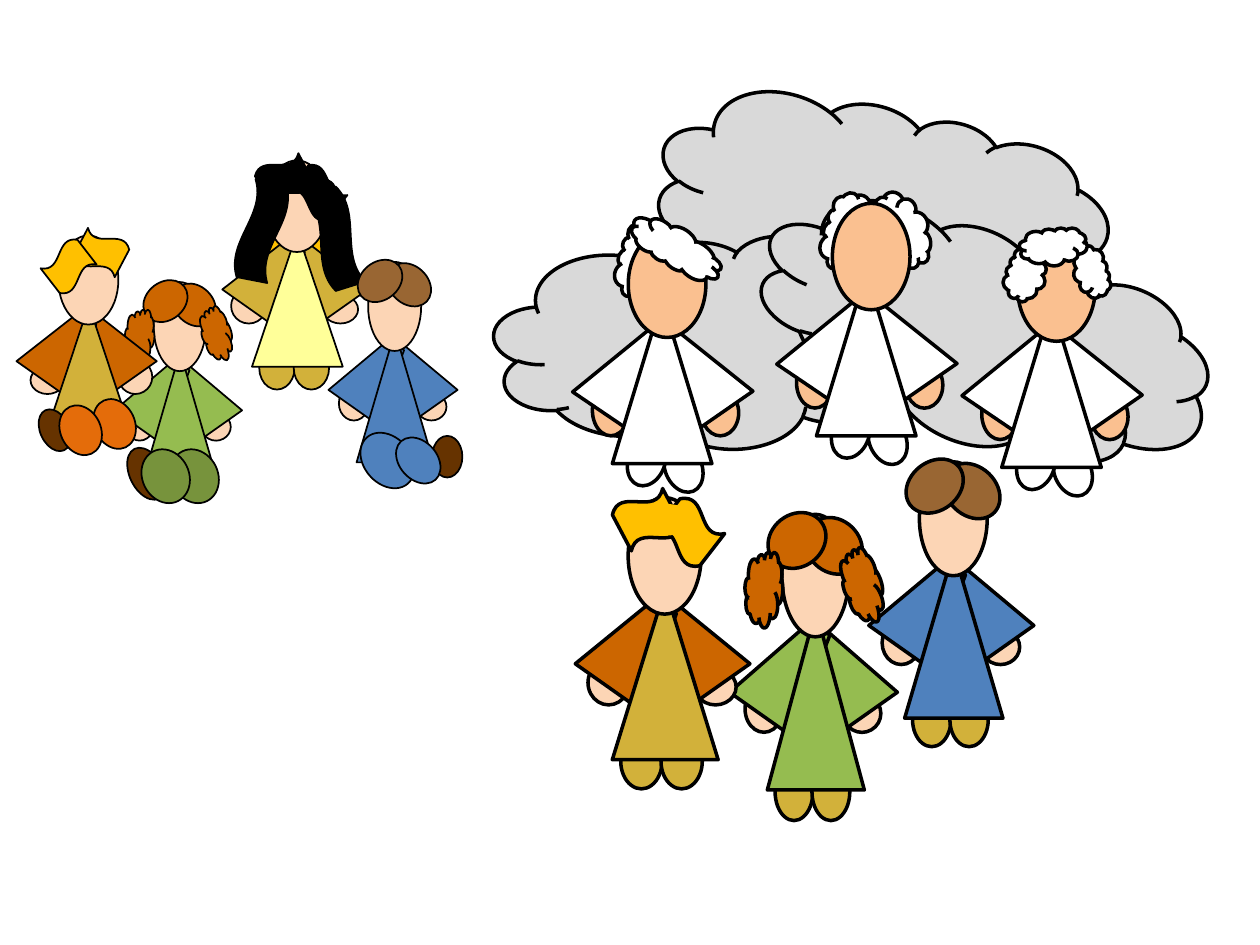
from pptx import Presentation
from pptx.dml.color import RGBColor
from pptx.enum.shapes import MSO_SHAPE
from pptx.util import Inches, Pt

BLACK = RGBColor(0x00, 0x00, 0x00)
WHITE = RGBColor(0xFF, 0xFF, 0xFF)
GREY = RGBColor(0xD9, 0xD9, 0xD9)
PEACH = RGBColor(0xFC, 0xD5, 0xB5)
TAN = RGBColor(0xFA, 0xC0, 0x90)
GOLD = RGBColor(0xFF, 0xC0, 0x00)
OCHRE = RGBColor(0xD2, 0xB1, 0x3A)
YELLOW = RGBColor(0xFF, 0xFF, 0x99)
RUST = RGBColor(0xCC, 0x66, 0x00)
ORANGE = RGBColor(0xE4, 0x6C, 0x0A)
BROWN = RGBColor(0x99, 0x66, 0x33)
DARK_BROWN = RGBColor(0x66, 0x33, 0x00)
GREEN = RGBColor(0x95, 0xBC, 0x50)
DARK_GREEN = RGBColor(0x77, 0x93, 0x3C)
BLUE = RGBColor(0x4F, 0x81, 0xBD)

OVAL, CLOUD, WAVE = MSO_SHAPE.OVAL, MSO_SHAPE.CLOUD, MSO_SHAPE.WAVE
TRIANGLE, TRAPEZOID = MSO_SHAPE.ISOSCELES_TRIANGLE, MSO_SHAPE.TRAPEZOID

# Body parts as shares of the robe's box: role, kind, (x, y, width, height), rotation
FEET = [
    ("shoes", OVAL, (0.08, 0.85, 0.39, 0.32), 0),
    ("shoes", OVAL, (0.46, 0.85, 0.39, 0.32), 0),
]
HANDS = [
    ("skin", OVAL, (0.78, 0.47, 0.39, 0.21), 0),
    ("skin", OVAL, (-0.23, 0.42, 0.39, 0.26), 0),
]
MIRRORED_HANDS = [
    ("skin", OVAL, (0.84, 0.42, 0.39, 0.26), 0),
    ("skin", OVAL, (-0.17, 0.47, 0.39, 0.21), 0),
]
ROBE = [("robe", TRIANGLE, (0, 0, 1, 1), 0)]
BODY = [
    ("sleeves", TRAPEZOID, (0.33, 0.05, 0.77, 0.58), 324.8),
    ("sleeves", TRAPEZOID, (-0.15, 0.05, 0.77, 0.58), 35.2),
] + ROBE
HEAD = [("skin", OVAL, (0.15, -0.53, 0.69, 0.68), 0)]
PARTED_HAIR = [
    ("hair", OVAL, (0.37, -0.5, 0.63, 0.29), 43.6),
    ("hair", OVAL, (-0.01, -0.53, 0.63, 0.29), 141.7),
]
PIGTAILS = [
    ("hair", CLOUD, (-0.23, -0.32, 0.39, 0.42), 0),
    ("hair", CLOUD, (0.79, -0.34, 0.39, 0.42), 339.2),
]
SEATED = HANDS + BODY + HEAD
STANDING = FEET + SEATED
ELDER_BODY = [
    ("shoes", OVAL, (0.53, 0.87, 0.37, 0.31), 337.4),
    ("shoes", OVAL, (0.16, 0.83, 0.37, 0.31), 20.1),
    ("skin", OVAL, (0.9, 0.55, 0.37, 0.28), 0),
    ("skin", OVAL, (-0.2, 0.52, 0.37, 0.31), 0),
    ("sleeves", TRIANGLE, (0.4, 0.01, 0.73, 0.74), 325.3),
    ("sleeves", TRIANGLE, (-0.12, 0.01, 0.73, 0.74), 34.1),
] + ROBE
ELDER_HEAD = [("skin", OVAL, (0.16, -0.42, 0.78, 0.65), 0)]

ELDER = dict(skin=TAN, sleeves=WHITE, robe=WHITE, shoes=WHITE)
WOMAN = dict(skin=PEACH, sleeves=OCHRE, robe=YELLOW, shoes=OCHRE)
BLOND = dict(skin=PEACH, sleeves=RUST, robe=OCHRE, shoes=OCHRE)
REDHEAD = dict(skin=PEACH, sleeves=GREEN, robe=GREEN, shoes=OCHRE, hair=RUST)
BRUNET = dict(skin=PEACH, sleeves=BLUE, robe=BLUE, shoes=OCHRE, hair=BROWN)


class Scene:
    """Draws on a grid of 100 columns by 75 rows."""

    def __init__(self, slide, presentation):
        self.slide = slide
        self.column = presentation.slide_width / 100
        self.row = presentation.slide_height / 75

    def start_group(self, line_width):
        self.shapes = self.slide.shapes.add_group_shape().shapes
        self.line_width = Pt(line_width)

    def shape(self, kind, box, color, rotation=0, flip=False, outlined=True):
        left, top, width, height = box
        shape = self.shapes.add_shape(
            kind, round(left * self.column), round(top * self.row),
            round(width * self.column), round(height * self.row))
        shape.rotation = rotation
        shape.shadow.inherit = False
        shape.fill.solid()
        shape.fill.fore_color.rgb = color
        if outlined:
            shape.line.color.rgb = BLACK
            shape.line.width = self.line_width
        else:
            shape.line.fill.background()
        if kind == TRAPEZOID:
            shape.adjustments[0] = 0.342
        if flip:
            shape._element.spPr.xfrm.set("flipH", "1")

    def several(self, kind, color, *placed, flip=False):
        """Draw shapes of one kind, each given as (left, top, width, height, rotation)."""
        for *box, rotation in placed:
            self.shape(kind, box, color, rotation, flip)

    def figure(self, robe, parts, colors):
        left, top, width, height = robe
        for role, kind, (x, y, w, h), rotation in parts:
            box = (left + x * width, top + y * height, w * width, h * height)
            self.shape(kind, box, colors[role], rotation)


def draw_seated_family(scene):
    scene.start_group(1)
    scene.shape(MSO_SHAPE.ROUNDED_RECTANGLE, (20, 16.5, 7.2, 5.6), GOLD)
    scene.figure((20, 18.4, 7.2, 10.7), STANDING, WOMAN)
    scene.several(WAVE, BLACK, (20.6, 12.5, 3.9, 3.4, 332.2), (23.3, 13.6, 3.9, 3.4, 37.7),
                  (16.8, 16.7, 7.9, 3.3, 281), (22.7, 17.3, 7.9, 3.3, 72.6))
    scene.several(OVAL, BLACK, (20.6, 14.2, 2.2, 1.7, 0), (24.4, 14.2, 2.2, 1.7, 0))

    scene.figure((11.3, 27.9, 6, 10.4), SEATED + PARTED_HAIR + PIGTAILS, REDHEAD)
    scene.several(OVAL, DARK_GREEN, (13.6, 35.6, 3.7, 4.4, 333.8))
    scene.several(OVAL, DARK_BROWN, (10.3, 35.4, 2.7, 4.4, 333.8))
    scene.several(OVAL, DARK_GREEN, (11.3, 35.6, 3.7, 4.4, 333.8))

    scene.figure((3.6, 24.2, 6.9, 10.4), MIRRORED_HANDS + BODY + HEAD, BLOND)
    scene.several(OVAL, DARK_BROWN, (3.2, 32.4, 2.3, 3.5, 334.9))
    scene.several(WAVE, GOLD, (6.2, 18.4, 3.7, 3.3, 27.8), (3.6, 19.5, 3.7, 3.3, 322.3), flip=True)
    scene.several(OVAL, ORANGE, (7.5, 31.6, 3.2, 4.1, 334.9), (4.8, 32.1, 3.2, 4.1, 334.9))

    scene.several(OVAL, DARK_BROWN, (34.3, 34.6, 2.4, 3.3, 0))
    scene.figure((28.3, 26.3, 6.1, 10.4), SEATED + PARTED_HAIR, BRUNET)
    scene.several(OVAL, BLUE, (28.9, 34.1, 3.7, 4.9, 318.2), (31.7, 34.5, 3, 4.1, 318.2))


def draw_elders_on_clouds(scene):
    scene.start_group(2)
    scene.several(CLOUD, GREY, (51.8, 8.3, 36.5, 18.5, 16.8), (39.2, 18.7, 37.1, 16.9, 0),
                  (59.5, 18.3, 37.1, 16.9, 23.5))
    elders = [  # robe, hair behind the head, hair in front of it
        ((64.8, 21.6, 7.9, 13), [(64.2, 16.4, 6.3, 4.1, 294), (68.5, 16.2, 6.3, 4.1, 251.1)], []),
        ((48.6, 23.8, 7.9, 13), [(47.9, 18.6, 6.3, 4.1, 294)], [(49.7, 18.1, 8, 3.2, 214.2)]),
        ((79.5, 24.1, 7.9, 13), [], [(79.3, 20.2, 4.2, 3.3, 300.3), (84.5, 20.2, 4.2, 2.8, 81),
                                     (80.9, 18.1, 5.4, 3, 0)]),
    ]
    for robe, hair_behind, hair_in_front in elders:
        scene.figure(robe, ELDER_BODY, ELDER)
        scene.several(CLOUD, WHITE, *hair_behind)
        scene.figure(robe, ELDER_HEAD, ELDER)
        scene.several(CLOUD, WHITE, *hair_in_front)


def draw_standing_children(scene):
    children = [
        ((71.8, 43.7, 7.8, 13.3), STANDING + PARTED_HAIR, BRUNET),
        ((60.9, 48.4, 7.7, 14.3), STANDING + PARTED_HAIR + PIGTAILS, REDHEAD),
        ((48.6, 46.7, 8.4, 13.6), STANDING, BLOND),
    ]
    for robe, parts, colors in children:
        scene.start_group(2)
        scene.figure(robe, parts, colors)
    scene.several(WAVE, GOLD, (49.1, 39.1, 4.5, 4.3, 332.2), (52.5, 40.1, 4.5, 4.3, 37.7))
    scene.shape(OVAL, (50.8, 40, 4.2, 2.5), GOLD, outlined=False)


def main():
    presentation = Presentation()
    presentation.slide_width, presentation.slide_height = Inches(10), Inches(7.5)
    slide = presentation.slides.add_slide(presentation.slide_layouts[6])
    scene = Scene(slide, presentation)
    draw_seated_family(scene)
    draw_elders_on_clouds(scene)
    draw_standing_children(scene)
    presentation.save("out.pptx")


if __name__ == "__main__":
    main()
